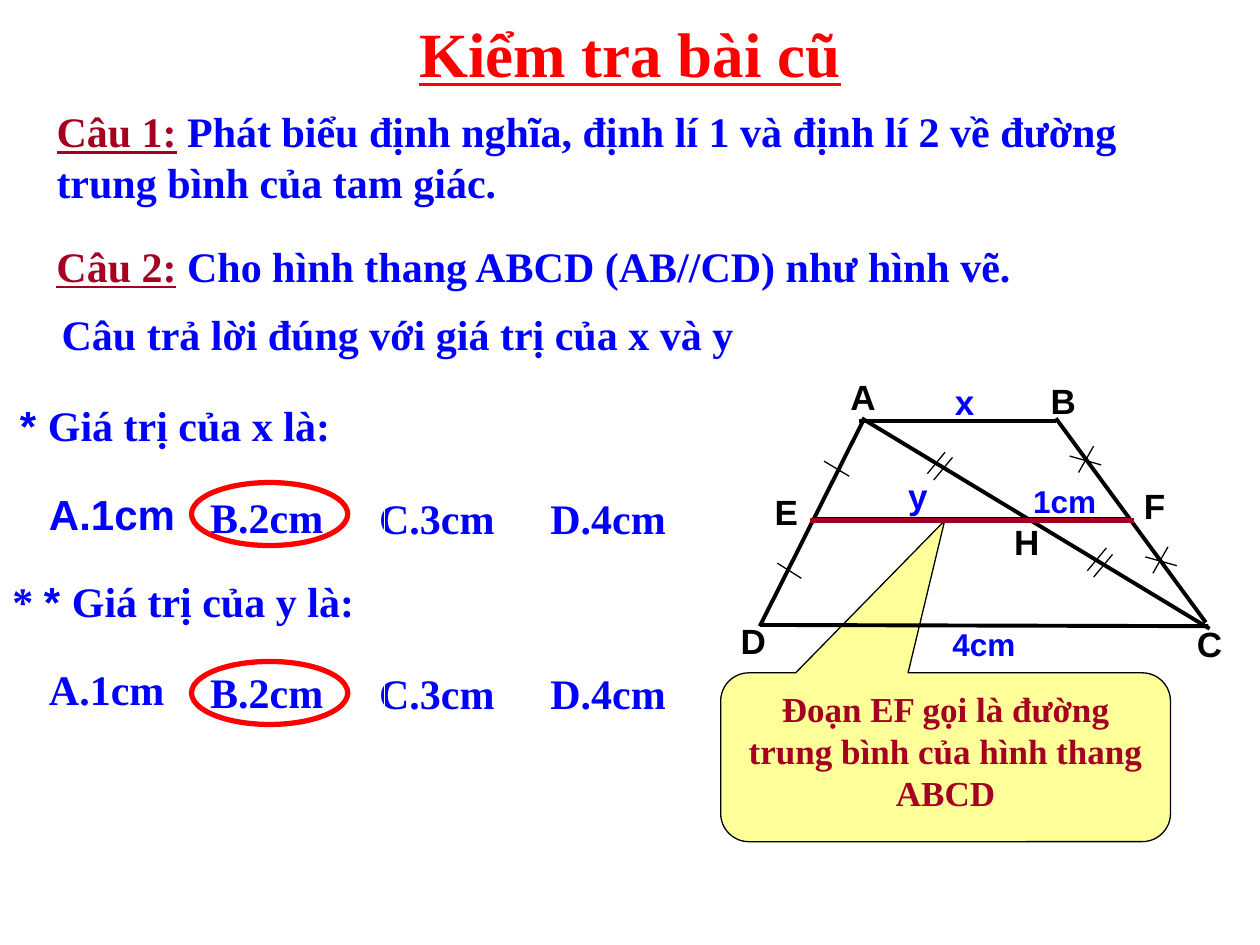
import pptx
import pptx.dml.color
import pptx.enum.shapes
import pptx.enum.text
import pptx.util
import lxml.etree
from pptx.util import Inches

RED, MAROON, BLUE, BLACK = "FF0000", "A50021", "0000FF", "000000"
SERIF, SANS = "Times New Roman", "Arial"
MSO = pptx.enum.shapes.MSO_SHAPE
ALIGN = pptx.enum.text.PP_ALIGN
ANCHOR = pptx.enum.text.MSO_ANCHOR

prs = pptx.Presentation()
prs.slide_width, prs.slide_height = Inches(10), Inches(7.5)
s = prs.slides.add_slide(prs.slide_layouts[6])


def rgb(value):
    return pptx.dml.color.RGBColor.from_string(value)


def text(runs, box=None, sp=None, font=SERIF, size=24, color=BLUE,
         align=ALIGN.LEFT, anchor=ANCHOR.TOP):
    """Write bold runs, each (text, overrides), in sp or in a new text box."""
    if sp is None:
        sp = s.shapes.add_textbox(*map(Inches, box))
    tf = sp.text_frame
    tf.word_wrap = True
    tf.vertical_anchor = anchor
    p = tf.paragraphs[0]
    p.alignment = align
    if isinstance(runs, str):
        runs = [(runs, {})]
    for words, own in runs:
        r = p.add_run()
        r.text = words
        r.font.name = own.get("font", font)
        r.font.size = pptx.util.Pt(size)
        r.font.bold = True
        r.font.underline = own.get("underline", False)
        r.font.color.rgb = rgb(own.get("color", color))


# Title and questions
heading = {"color": MAROON, "underline": True}
text([("Kiểm tra bài cũ", {"underline": True})], (0.75, 0, 8.5, 0.83),
     size=36, color=RED, align=ALIGN.CENTER, anchor=ANCHOR.MIDDLE)
text([("Câu 1:", heading),
      (" Phát biểu định nghĩa, định lí 1 và định lí 2 về đường "
       "trung bình của tam giác.", {})], (0.35, 0.79, 9.31, 1.33))
text([("Câu 2:", heading),
      (" Cho hình thang ABCD (AB//CD) như hình vẽ.", {})],
     (0.35, 1.86, 8.73, 0.67))
text("Câu trả lời đúng với giá trị của x và y", (0.39, 2.4, 7.82, 0.5))
text([("* ", {"font": SANS}), ("Giá trị của x là:", {})],
     (0.06, 3.12, 3.67, 0.5))
text([("* ", {}), ("* ", {"font": SANS}), ("Giá trị của y là:", {})],
     (0, 4.52, 3.67, 0.5))

# Answer rows, the right choice ringed
for top, ring_top, first_font in ((3.83, 3.83, SANS), (5.22, 5.25, SERIF)):
    text("D.4cm", (4.27, top + 0.03, 1.46, 0.5))
    text("C.3cm", (2.91, top + 0.03, 1.62, 0.5))
    choice = s.shapes.add_shape(MSO.RECTANGLE, Inches(1.57), Inches(top + 0.02),
                                Inches(1.48), Inches(0.51))
    ring = s.shapes.add_shape(MSO.OVAL, Inches(1.52), Inches(ring_top),
                              Inches(1.24), Inches(0.5))
    for sp, color, width in ((choice, "FFFFFF", 0.75), (ring, RED, 3)):
        sp.shadow.inherit = False
        sp.fill.background()
        sp.line.color.rgb = rgb(color)
        sp.line.width = pptx.util.Pt(width)
    text("B.2cm", sp=choice)
    text("A.1cm", (0.29, top, 1.25, 0.5), font=first_font)

# Callout pointing at EF
callout = s.shapes.add_shape(MSO.ROUNDED_RECTANGULAR_CALLOUT, Inches(5.72),
                             Inches(5.34), Inches(3.57), Inches(1.34))
for i, value in enumerate((-0.002, -1.401, 0.167)):
    callout.adjustments[i] = value
callout.shadow.inherit = False
callout.fill.solid()
callout.fill.fore_color.rgb = rgb("FFFF99")
callout.line.color.rgb = rgb(BLACK)
callout.line.width = pptx.util.Pt(0.75)
text("Đoạn EF gọi là đường trung bình của hình thang ABCD", sp=callout,
     size=20, color=MAROON, align=ALIGN.CENTER)

# Trapezium, its diagonal and midline, then the equal-length ticks
sides = [
    (6.82, 3.34, 8.38, 3.34),  # AB
    (6.03, 4.96, 9.59, 4.97),  # DC
    (6.85, 3.34, 6.03, 4.97),  # AD
    (8.38, 3.32, 9.57, 4.94),  # BC
    (6.84, 3.32, 9.6, 4.99),   # AC
    (6.47, 4.12, 8.95, 4.12),  # EF
]
midline = [(6.43, 4.13, 9, 4.13)]
ticks = [
    (6.54, 3.66, 6.74, 3.78), (6.17, 4.47, 6.36, 4.59),
    (7.5, 3.59, 7.36, 3.76), (7.56, 3.63, 7.41, 3.81),
    (8.78, 4.35, 8.63, 4.53), (8.83, 4.4, 8.68, 4.58),
    (8.68, 3.54, 8.56, 3.75), (9.27, 4.34, 9.15, 4.55),
    (8.49, 3.62, 8.74, 3.69), (9.09, 4.42, 9.34, 4.49),
]
for lines, color, width in ((sides, BLACK, 2.25), (midline, MAROON, 3),
                            (ticks, BLACK, 0.75)):
    for ends in lines:
        line = s.shapes.add_connector(pptx.enum.shapes.MSO_CONNECTOR.STRAIGHT,
                                      *map(Inches, ends))
        line.line.color.rgb = rgb(color)
        line.line.width = pptx.util.Pt(width)
        lxml.etree.SubElement(line.element.spPr,
                              pptx.oxml.ns.qn("a:effectLst"))

# Point names and lengths
for name, left, top in (("A", 6.65, 2.93), ("B", 8.24, 2.96), ("D", 5.78, 4.87),
                        ("C", 9.4, 4.89), ("x", 7.48, 2.97), ("y", 7.11, 3.72),
                        ("E", 6.05, 3.84), ("F", 8.98, 3.8), ("H", 7.95, 4.08)):
    text(name, (left, top, 0.41, 0.43), font=SANS, size=20,
         color=BLACK if name.isupper() else BLUE)
for length, left, top in (("4cm", 7.46, 4.91), ("1cm", 8.1, 3.78)):
    text(length, (left, top, 0.82, 0.4), font=SANS, size=18)

prs.save("out.pptx")
